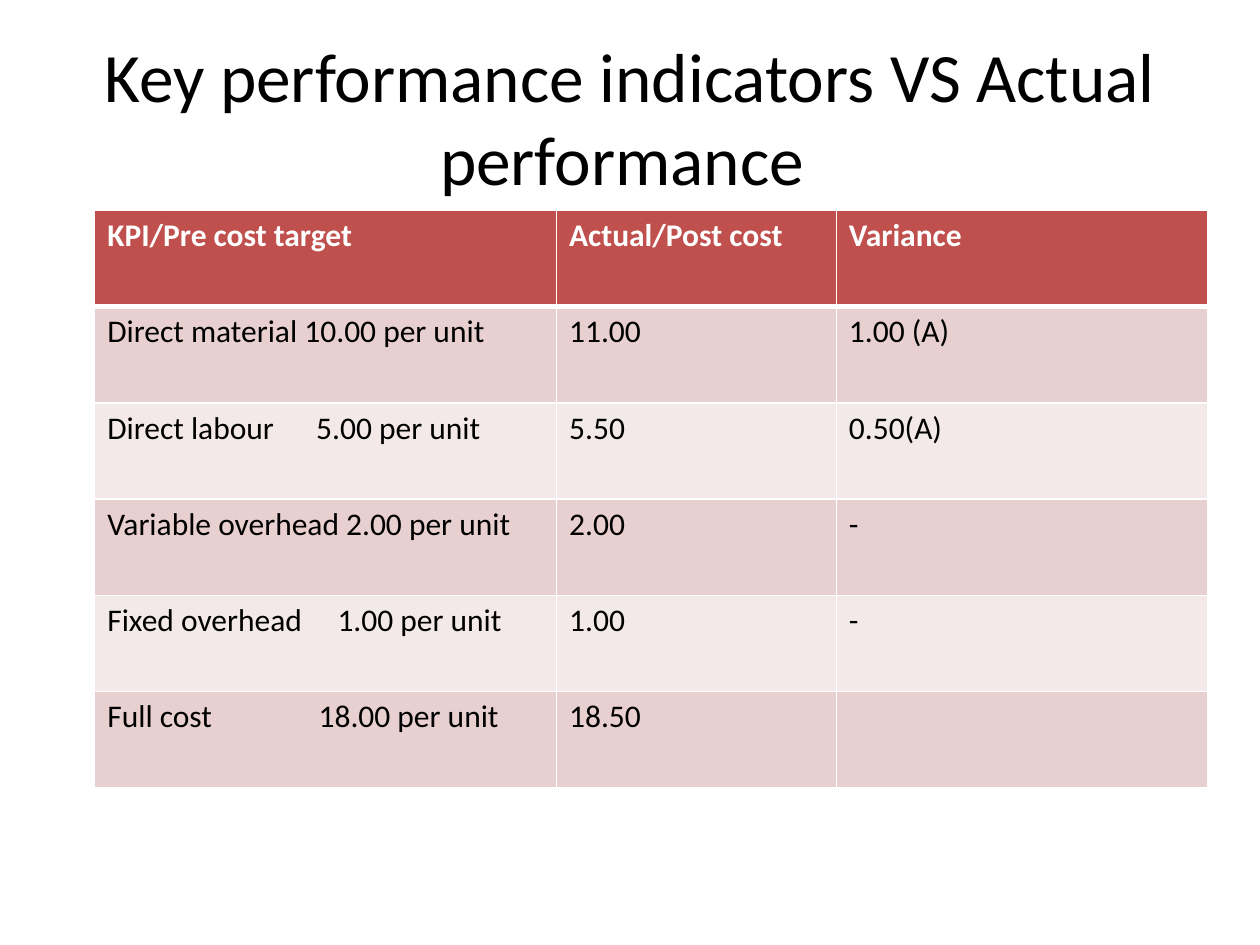
from dataclasses import dataclass

from lxml.etree import SubElement
from pptx import Presentation
from pptx.dml.color import RGBColor as Rgb
from pptx.enum.text import MSO_ANCHOR as Anchor, PP_ALIGN as Align
from pptx.oxml.ns import qn
from pptx.util import Cm, Pt


@dataclass(frozen=True)
class Theme:
    font: str = "Calibri"
    title_size: float = 39.6
    table_size: float = 18
    text: str = "000000"
    header_text: str = "FFFFFF"
    header_fill: str = "C0504D"
    bands: tuple = ("E8D0D0", "F4E9E9")
    rule: str = "FFFFFF"


theme = Theme()


def style_text(paragraph, size, color, bold=False):
    for run in paragraph.runs:
        run.font.name = theme.font
        run.font.size = Pt(size)
        run.font.bold = bold
        run.font.color.rgb = Rgb.from_string(color)


def add_border(cell, side, width):
    line = SubElement(cell._tc.get_or_add_tcPr(), qn(f"a:{side}"), w=str(Pt(width)))
    fill = SubElement(line, qn("a:solidFill"))
    SubElement(fill, qn("a:srgbClr"), val=theme.rule)


# Slide
deck = Presentation()
deck.slide_width, deck.slide_height = Cm(25.4), Cm(19.05)
slide = deck.slides.add_slide(deck.slide_layouts[6])

# Title
title = slide.shapes.add_textbox(Cm(1.27), Cm(0.76), Cm(22.86), Cm(3.18)).text_frame
title.word_wrap = True
title.vertical_anchor = Anchor.MIDDLE
title.text = "Key performance indicators VS Actual performance "
title.paragraphs[0].alignment = Align.CENTER
style_text(title.paragraphs[0], theme.title_size, theme.text)

# Cost comparison: a tab sets off the target where it stands apart from its label
costs = [
    ("KPI/Pre cost target", "Actual/Post cost", "Variance"),
    ("Direct material 10.00 per unit", "11.00", "1.00 (A)"),
    ("Direct labour\t5.00 per unit", "5.50", "0.50(A)"),
    ("Variable overhead 2.00 per unit", "2.00", "-"),
    ("Fixed overhead\t1.00 per unit", "1.00", "-"),
    ("Full cost\t18.00 per unit", "18.50", ""),
]
target_tabs = {2: Cm(4.21), 4: Cm(4.64), 5: Cm(4.26)}
column_widths = [Cm(9.31), Cm(5.64), Cm(7.48)]
row_height = Cm(1.94)

comparison = slide.shapes.add_table(
    len(costs), len(column_widths), Cm(1.91), Cm(4.24),
    sum(column_widths), row_height * len(costs),
).table
for column, width in zip(comparison.columns, column_widths):
    column.width = width

for row_index, entries in enumerate(costs):
    is_header = row_index == 0
    comparison.rows[row_index].height = row_height
    fill = theme.header_fill if is_header else theme.bands[(row_index - 1) % 2]
    color = theme.header_text if is_header else theme.text

    for column_index, entry in enumerate(entries):
        cell = comparison.cell(row_index, column_index)
        cell.text_frame.text = entry
        paragraph = cell.text_frame.paragraphs[0]
        style_text(paragraph, theme.table_size, color, is_header)

        # Tab stop for the target figure
        if column_index == 0 and row_index in target_tabs:
            tabs = SubElement(paragraph._p.get_or_add_pPr(), qn("a:tabLst"))
            SubElement(tabs, qn("a:tab"), pos=str(target_tabs[row_index]), algn="l")

        # Thin white rules, with a heavier one under the header
        add_border(cell, "lnL", 1)
        add_border(cell, "lnR", 1)
        add_border(cell, "lnT", 3 if row_index == 1 else 1)
        add_border(cell, "lnB", 3 if is_header else 1)
        cell.fill.solid()
        cell.fill.fore_color.rgb = Rgb.from_string(fill)

deck.save("out.pptx")
